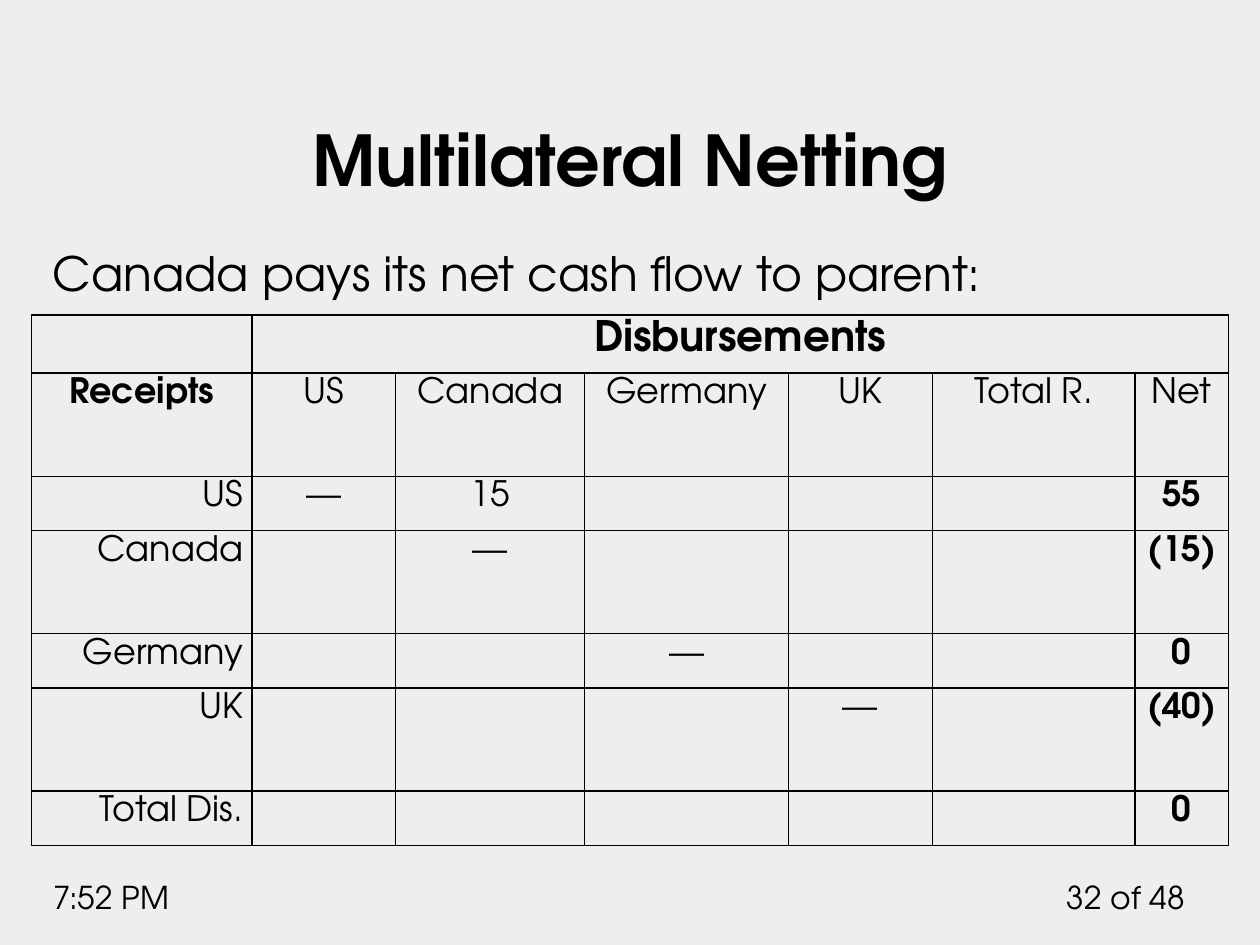
"""Build the multilateral netting slide with its table of receipts and disbursements."""
import pptx
import pptx.dml.color
import pptx.enum.text
import pptx.oxml
import pptx.oxml.ns
import pptx.util

Inches = pptx.util.Inches
Pt = pptx.util.Pt
ALIGN = pptx.enum.text.PP_ALIGN
ANCHOR = pptx.enum.text.MSO_ANCHOR
FONT = "TeX Gyre Adventor"
BLACK = pptx.dml.color.RGBColor(0x00, 0x00, 0x00)
BACKGROUND = pptx.dml.color.RGBColor(0xEE, 0xEE, 0xEE)


def write(frame, text, size, bold=False, align=ALIGN.LEFT, spacing=1.0):
    paragraph = frame.paragraphs[0]
    paragraph.alignment = align
    paragraph.line_spacing = spacing
    run = paragraph.add_run()
    run.text = text
    run.font.color.rgb = BLACK
    for name, value in {"name": FONT, "size": Pt(size), "bold": bold}.items():
        setattr(run.font, name, value)


def add_border(cell, side):
    cell._tc.get_or_add_tcPr().append(pptx.oxml.parse_xml(
        f'<a:{side} {pptx.oxml.ns.nsdecls("a")} w="{Pt(1)}">'
        f'<a:solidFill><a:srgbClr val="{BLACK}"/></a:solidFill></a:{side}>'))


deck = pptx.Presentation()
deck.slide_width, deck.slide_height = Inches(10), Inches(7.5)
slide = deck.slides.add_slide(deck.slide_layouts[5])
slide.background.fill.solid()
slide.background.fill.fore_color.rgb = BACKGROUND

title = slide.shapes.title
title_place = {"left": 0.5, "top": 0.39, "width": 9, "height": 1.25}
for name, value in title_place.items():
    setattr(title, name, Inches(value))
title_format = {
    "word_wrap": True,
    "auto_size": pptx.enum.text.MSO_AUTO_SIZE.NONE,
    "vertical_anchor": ANCHOR.BOTTOM,
}
for name, value in title_format.items():
    setattr(title.text_frame, name, value)
write(title.text_frame, "Multilateral Netting", 40, True, ALIGN.CENTER)

text_lines = [
    ("Canada pays its net cash flow to parent:", (0.32, 1.89, 9.35, 0.53), 27, ALIGN.LEFT),
    ("7:52 PM", (0.33, 6.92, 1.58, 0.4), 18, ALIGN.LEFT),
    ("32 of 48", (8.33, 6.92, 1.17, 0.4), 18, ALIGN.RIGHT),
]
for text, place, size, align in text_lines:
    line = slide.shapes.add_textbox(*map(Inches, place))
    line.text_frame.word_wrap = True
    write(line.text_frame, text, size, align=align)

column_widths = [1.75, 1.14, 1.5, 1.62, 1.14, 1.61, 0.74]
row_heights = [0.46, 0.82, 0.43, 0.82, 0.43, 0.82, 0.43]
netting_rows = [
    ["", "Disbursements", "", "", "", "", ""],
    ["Receipts", "US", "Canada", "Germany", "UK", "Total R.", "Net"],
    ["US", "—", "15", "", "", "", "55"],
    ["Canada", "", "—", "", "", "", "(15)"],
    ["Germany", "", "", "—", "", "", "0"],
    ["UK", "", "", "", "—", "", "(40)"],
    ["Total Dis.", "", "", "", "", "", "0"],
]
netting = slide.shapes.add_table(
    len(row_heights), len(column_widths),
    Inches(0.25), Inches(2.5), Inches(9.5), Inches(4.2)).table
netting.first_row = netting.horz_banding = False
for column, width in zip(netting.columns, column_widths):
    column.width = Inches(width)
for row, height in zip(netting.rows, row_heights):
    row.height = Inches(height)
netting.cell(0, 1).merge(netting.cell(0, 6))

cell_format = {
    "margin_left": Inches(0.07),
    "margin_right": Inches(0.07),
    "margin_top": 0,
    "margin_bottom": 0,
    "vertical_anchor": ANCHOR.TOP,
}
for r, values in enumerate(netting_rows):
    for c, value in enumerate(values):
        cell = netting.cell(r, c)
        for name, setting in cell_format.items():
            setattr(cell, name, setting)
        for side in ("lnL", "lnR", "lnT", "lnB"):
            add_border(cell, side)
        cell.fill.background()
        if value:
            bold = r == 0 or (r == 1 and c == 0) or (r > 1 and c == 6)
            align = ALIGN.RIGHT if r > 1 and c == 0 else ALIGN.CENTER
            write(cell.text_frame, value, 24 if r == 0 else 20, bold, align, 1.15)

deck.save("out.pptx")
